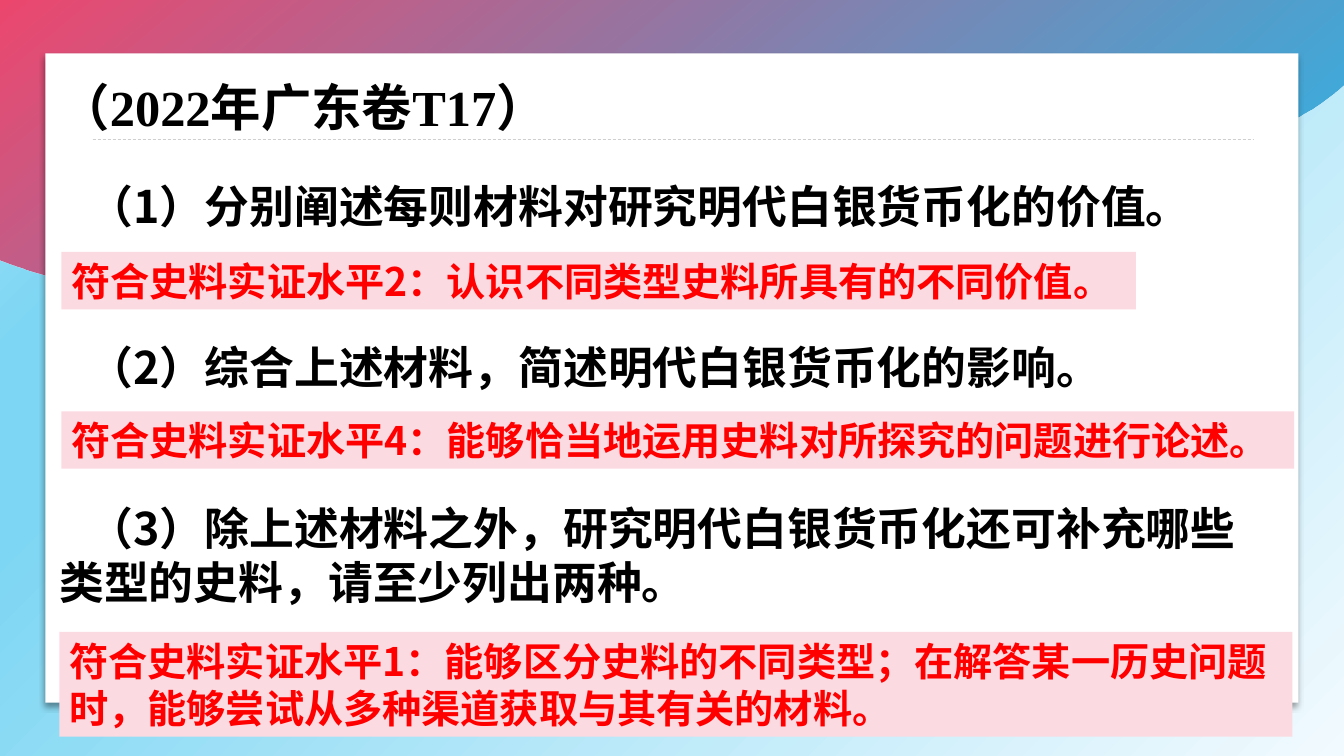
from dataclasses import dataclass

from lxml.etree import SubElement as Sub
from pptx import Presentation
from pptx.dml.color import RGBColor as Rgb
from pptx.enum.dml import MSO_LINE as Dash
from pptx.enum.shapes import MSO_CONNECTOR as Link, MSO_SHAPE as Kind
from pptx.enum.text import MSO_ANCHOR as Anchor, MSO_AUTO_SIZE as Fit, PP_ALIGN as Align
from pptx.oxml import parse_xml
from pptx.oxml.ns import nsdecls, qn
from pptx.util import Pt


@dataclass(frozen=True)
class Theme:
    """Colours, fonts and type sizes of the slide."""
    ink: str = "000000"
    red: str = "FF0000"
    pink: str = "FCDAE2"
    white: str = "FFFFFF"
    rule: str = "D0CECE"
    sky: tuple = ((0, "F1FAFE", 100), (74, "7DD6F3", 100),
                  (83, "7DD6F3", 100), (100, "A9E4F7", 100))
    wave: tuple = ((0, "EE476E", 100), (100, "16B3E8", 90))
    serif: str = "Times New Roman"
    body: str = "Noto Sans CJK JP"
    note: str = "Noto Sans CJK SC"
    head: int = 36
    ask: int = 32
    hint: int = 28
    lead: float = 1.2


LOOK = Theme()
TITLE = "（2022年广东卷T17）"
TASKS = (
    "（1）分别阐述每则材料对研究明代白银货币化的价值。",
    "（2）综合上述材料，简述明代白银货币化的影响。",
    "（3）除上述材料之外，研究明代白银货币化还可补充哪些类型的史料，请至少列出两种。",
)
HINTS = (
    ("符合史料实证水平2：认识不同类型史料所具有的不同价值。", (43.9, 180, 767.5, 41), False),
    ("符合史料实证水平4：能够恰当地运用史料对所探究的问题进行论述。",
     (43.9, 293.8, 880.6, 41), False),
    ("符合史料实证水平1：能够区分史料的不同类型；在解答某一历史问题时，能够尝试从多种渠道获取与其有关的材料。",
     (42.5, 451.4, 880.6, 74.9), True),
)
CURVES = (
    ((1.22, 3.04), (2.66, 3.11), (3.93, 2.74)),
    ((5.3, 2.35), (6.48, 1.51), (7.92, 1.36)),
    ((9.36, 1.21), (10.88, 1.8), (12.27, 1.42)),
    ((12.67, 1.31), (13.04, 1.11), (13.33, 0.85)),
)


def blend(stops, way):
    """Return a gradient fill with the given stops and direction XML."""
    marks = "".join(
        f'<a:gs pos="{pos * 1000}"><a:srgbClr val="{tint}">'
        f'<a:alpha val="{alpha * 1000}"/></a:srgbClr></a:gs>'
        for pos, tint, alpha in stops)
    return parse_xml(f'<a:gradFill {nsdecls("a")} rotWithShape="1">'
                     f'<a:gsLst>{marks}</a:gsLst>{way}</a:gradFill>')


def swap(owner, fill):
    """Put a gradient in place of the solid fill of an element."""
    owner.replace(owner.find(qn("a:solidFill")), fill)


def paint(slide):
    """Fill the slide background with a radial gradient."""
    slide.background.fill.solid()
    way = '<a:path path="circle"><a:fillToRect l="100000" t="100000"/></a:path>'
    swap(slide.background._cSld.bg.bgPr, blend(LOOK.sky, way))


def bend(start, one, two, end, steps=24):
    """Return points along a cubic curve after its start."""
    points = []
    for step in range(1, steps + 1):
        t = step / steps
        parts = ((1 - t) ** 3, 3 * t * (1 - t) ** 2, 3 * t * t * (1 - t), t ** 3)
        points.append(tuple(
            sum(part * spot[axis] for part, spot in zip(parts, (start, one, two, end)))
            for axis in (0, 1)))
    return points


def add_wave(slide):
    """Draw the gradient wave along the top."""
    spots = [(0, 2.58)]
    for curve in CURVES:
        spots += bend(spots[-1], *curve)
    spots.append((13.33, 0))
    pen = slide.shapes.build_freeform(0, 0, scale=Pt(0.1))
    pen.add_line_segments([(x * 720, y * 720) for x, y in spots], close=True)
    wave = pen.convert_to_shape()
    wave.shadow.inherit = False
    wave.fill.solid()
    wave.line.fill.background()
    swap(wave._element.spPr, blend(LOOK.wave, f'<a:lin ang="{50 * 60000}" scaled="0"/>'))


def add_box(slide, spot, tint):
    """Add a plain filled rectangle."""
    box = slide.shapes.add_shape(Kind.RECTANGLE, *map(Pt, spot))
    box.shadow.inherit = False
    box.fill.solid()
    box.fill.fore_color.rgb = Rgb.from_string(tint)
    box.line.fill.background()
    return box


def add_panel(slide):
    """Add the white panel with its soft shadow."""
    panel = add_box(slide, (32.4, 38.2, 895, 463.7), LOOK.white)
    glow = Sub(panel._element.spPr.find(qn("a:effectLst")), qn("a:outerShdw"),
               blurRad=str(Pt(4)), dist=str(Pt(3)), dir=str(90 * 60000),
               algn="t", rotWithShape="0")
    tint = Sub(glow, qn("a:srgbClr"), val=LOOK.ink)
    Sub(tint, qn("a:alpha"), val="40000")


def add_rule(slide):
    """Add the dashed line below the title."""
    rule = slide.shapes.add_connector(Link.STRAIGHT, Pt(66.2), Pt(99.4), Pt(895), Pt(99.4))
    rule.line.color.rgb = Rgb.from_string(LOOK.rule)
    rule.line.width = Pt(0.5)
    rule.line.dash_style = Dash.DASH
    Sub(rule._element.spPr, qn("a:effectLst"))


def style(para, face, size, tint):
    """Set the type of one paragraph."""
    para.alignment = Align.LEFT
    para.line_spacing = Pt(size * LOOK.lead)
    para.font.name = face
    para.font.size = Pt(size)
    para.font.bold = True
    para.font.color.rgb = Rgb.from_string(tint)


def set_title(slide):
    """Place and format the title in front of the panel."""
    title = slide.shapes.title
    slide.shapes._spTree.append(title._element)
    title.left, title.top, title.width, title.height = map(Pt, (35.3, 50.4, 892, 51.1))
    frame = title.text_frame
    frame.text = TITLE
    frame.word_wrap = True
    frame.auto_size = Fit.NONE
    frame.vertical_anchor = Anchor.TOP
    style(frame.paragraphs[0], LOOK.serif, LOOK.head, LOOK.ink)


def add_tasks(slide):
    """Add the three questions, two lines apart."""
    box = slide.shapes.add_textbox(*map(Pt, (35.3, 123.8, 882, 317.5)))
    frame = box.text_frame
    frame.word_wrap = True
    frame.text = "\n".join(TASKS)
    for rank, para in enumerate(frame.paragraphs):
        style(para, LOOK.body, LOOK.ask, LOOK.ink)
        para.space_before = Pt(2 * LOOK.ask * LOOK.lead if rank else 0)
        para._p.get_or_add_pPr().set("indent", str(Pt(20.9)))


def add_hint(slide, text, spot, wrap):
    """Add one pink bar with its red remark."""
    bar = add_box(slide, spot, LOOK.pink)
    frame = bar.text_frame
    frame.text = text
    frame.word_wrap = wrap
    frame.auto_size = Fit.SHAPE_TO_FIT_TEXT
    frame.vertical_anchor = Anchor.TOP
    style(frame.paragraphs[0], LOOK.note, LOOK.hint, LOOK.red)


def main():
    """Build and save the slide."""
    deck = Presentation()
    deck.slide_width, deck.slide_height = Pt(960), Pt(540)
    slide = deck.slides.add_slide(deck.slide_layouts[5])
    paint(slide)
    add_wave(slide)
    add_panel(slide)
    add_rule(slide)
    add_tasks(slide)
    set_title(slide)
    for hint in HINTS:
        add_hint(slide, *hint)
    deck.save("out.pptx")


if __name__ == "__main__":
    main()
